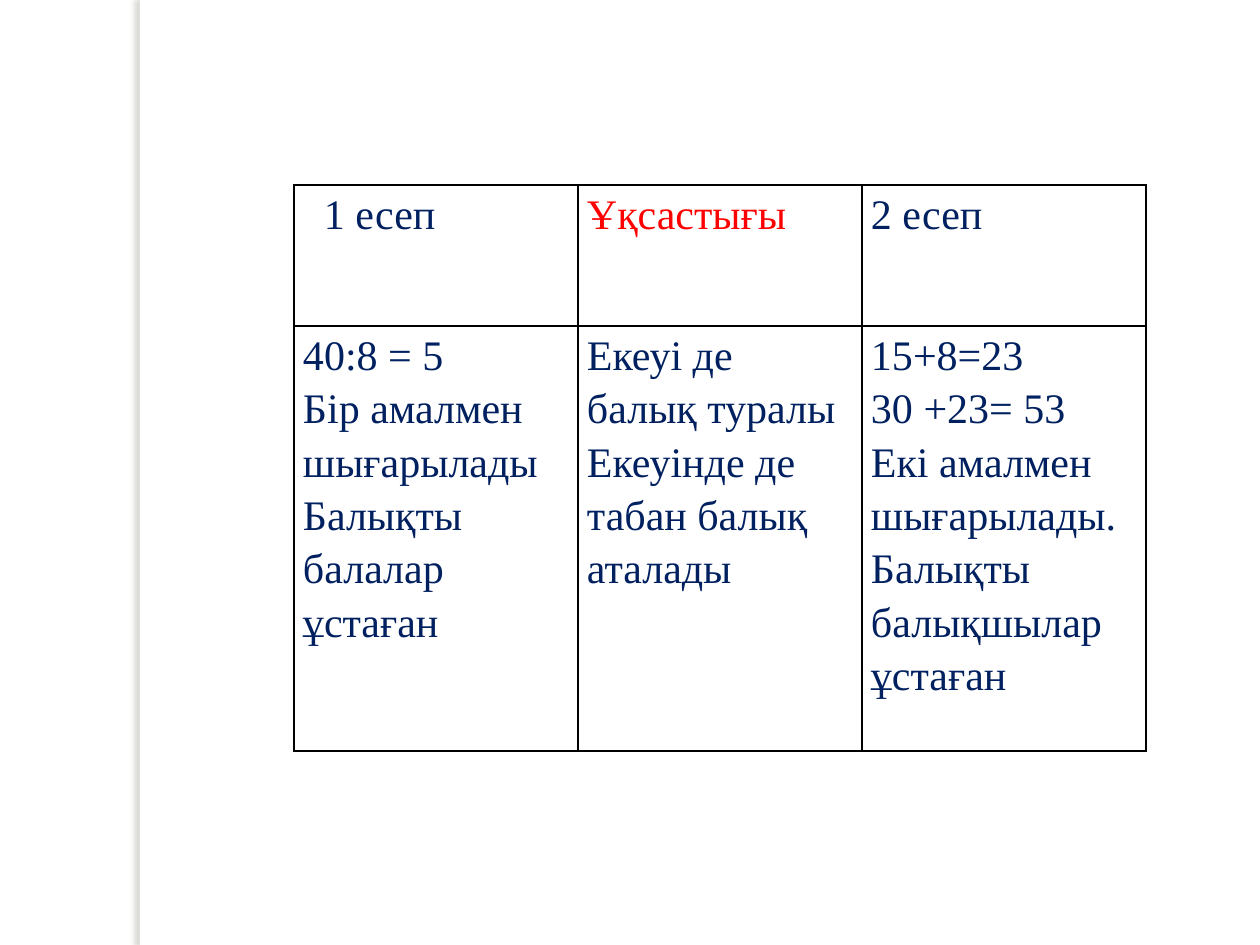
from dataclasses import dataclass

from lxml.etree import SubElement
from pptx import Presentation
from pptx.dml.color import RGBColor as RGB
from pptx.enum.shapes import MSO_SHAPE as Shape
from pptx.oxml.ns import qn
from pptx.util import Emu, Pt


@dataclass(frozen=True)
class Theme:
    """Colours and type of the slide."""
    font: str = "Times New Roman"
    size: int = 24
    line_spacing: float = 1.15
    text: str = "002060"
    accent: str = "FF0000"
    paper: str = "FFFFFF"
    border: str = "000000"
    shadow: str = "736F63"


THEME = Theme()

COMPARISON = [
    [["1 есеп"], ["Ұқсастығы"], ["2 есеп"]],
    [
        ["40:8 = 5", "Бір амалмен шығарылады", "Балықты балалар ұстаған"],
        ["Екеуі де балық туралы", "Екеуінде де табан балық аталады"],
        ["15+8=23", "30 +23= 53",
         "Екі амалмен шығарылады.Балықты балықшылар ұстаған"],
    ],
]


def px(length):
    """Turn px into EMU at 126 px to the inch."""
    return Emu(round(length * 914400 / 126))


def add_side_strip(slide, left, top, width, height):
    """Place the white strip that casts a soft shadow to its left."""
    strip = slide.shapes.add_shape(
        Shape.RECTANGLE, px(left), px(top), px(width), px(height))
    strip.fill.solid()
    strip.fill.fore_color.rgb = RGB.from_string(THEME.paper)
    strip.line.fill.background()
    strip.shadow.inherit = False
    effects = strip._element.spPr.find(qn("a:effectLst"))
    shadow = SubElement(
        effects, qn("a:outerShdw"), blurRad=str(Pt(3)), dist=str(Pt(3)),
        dir="10800000", algn="tl", rotWithShape="0")
    tint = SubElement(shadow, qn("a:srgbClr"), val=THEME.shadow)
    SubElement(tint, qn("a:alpha"), val="25000")


def style_cell(cell, indent):
    """Give a cell its insets, black borders and clear fill."""
    cell.margin_left = px(9 + indent)
    cell.margin_right = px(9)
    cell.margin_top = cell.margin_bottom = 0
    properties = cell._tc.get_or_add_tcPr()
    for side in ("lnL", "lnR", "lnT", "lnB"):
        line = SubElement(properties, qn(f"a:{side}"), w=str(Pt(1)))
        paint = SubElement(line, qn("a:solidFill"))
        SubElement(paint, qn("a:srgbClr"), val=THEME.border)
    cell.fill.background()


def write_cell(cell, sentences, color):
    """Write each sentence as a paragraph of the cell."""
    frame = cell.text_frame
    for index, sentence in enumerate(sentences):
        paragraph = frame.add_paragraph() if index else frame.paragraphs[0]
        paragraph.line_spacing = THEME.line_spacing
        run = paragraph.add_run()
        run.text = sentence
        run.font.name = THEME.font
        run.font.size = Pt(THEME.size)
        run.font.color.rgb = RGB.from_string(color)


def add_comparison(slide, left, top, width, height):
    """Place the table that compares the two problems."""
    columns = len(COMPARISON[0])
    table = slide.shapes.add_table(
        len(COMPARISON), columns,
        px(left), px(top), px(width), px(height)).table
    table.first_row = table.horz_banding = False
    for column in table.columns:
        column.width = px(width / columns)
    header_height = height // 4
    table.rows[0].height = px(header_height)
    table.rows[1].height = px(height - header_height)
    for row, entries in enumerate(COMPARISON):
        for column, sentences in enumerate(entries):
            cell = table.cell(row, column)
            style_cell(cell, 21 if (row, column) == (0, 0) else 0)
            is_accent = (row, column) == (0, 1)
            write_cell(cell, sentences,
                       THEME.accent if is_accent else THEME.text)


def main():
    """Build the slide and save it."""
    deck = Presentation()
    deck.slide_width, deck.slide_height = px(1260), px(945)
    slide = deck.slides.add_slide(deck.slide_layouts[6])
    add_side_strip(slide, 140, 0, 10, 945)
    add_comparison(slide, 294, 185, 852, 566)
    deck.save("out.pptx")


if __name__ == "__main__":
    main()
